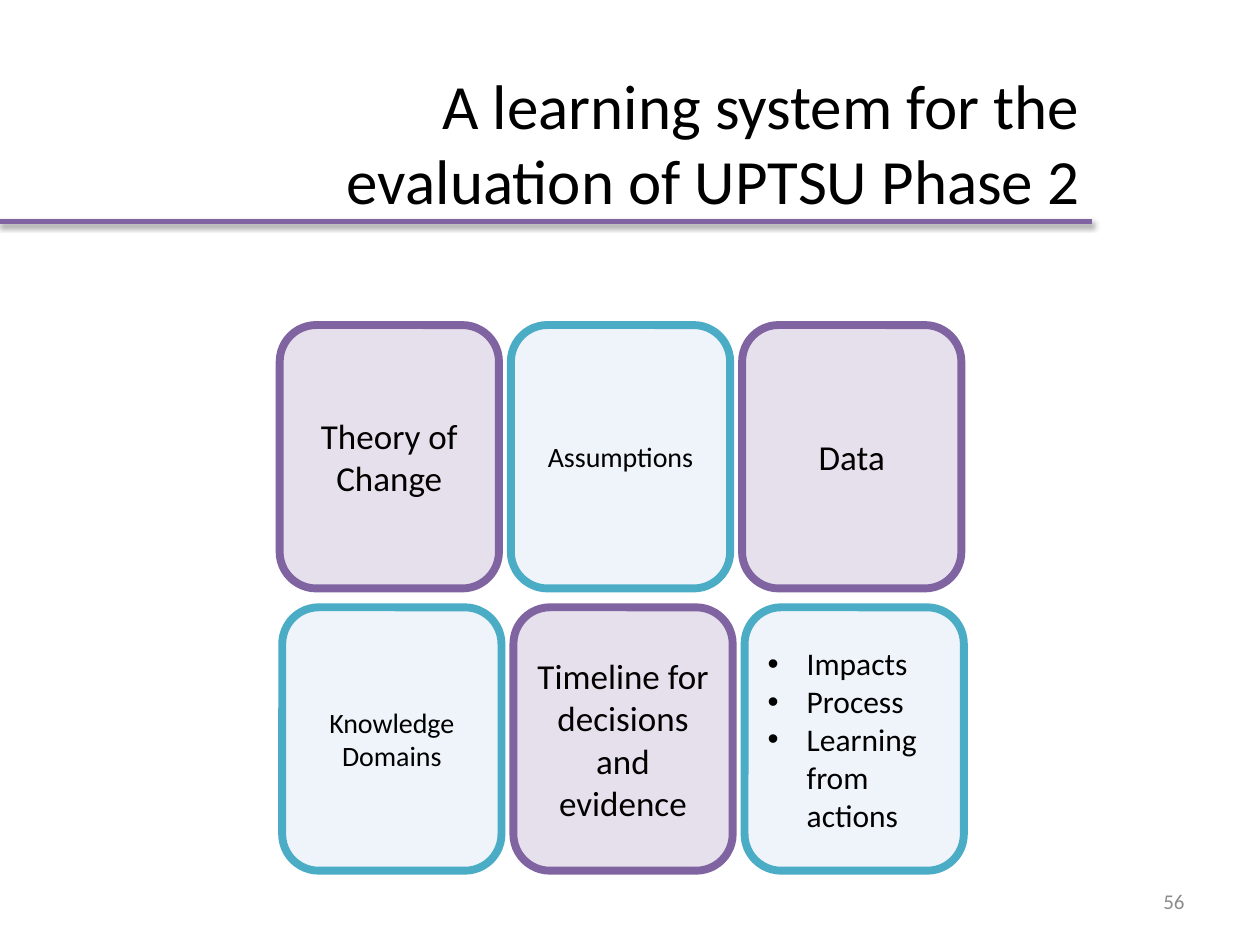
from dataclasses import dataclass

from lxml.etree import SubElement
from pptx import Presentation
from pptx.dml.color import RGBColor
from pptx.enum.shapes import MSO_CONNECTOR as Connector, MSO_SHAPE as Shape
from pptx.enum.text import MSO_ANCHOR as Anchor, PP_ALIGN as Align
from pptx.oxml.ns import qn
from pptx.util import Inches, Pt


@dataclass(frozen=True)
class Theme:
    font: str = "Calibri"
    ink: str = "000000"
    muted: str = "8C8C8C"
    purple: str = "8064A2"
    lilac: str = "E6E0EC"
    teal: str = "4BACC6"
    sky: str = "DEEBF7"
    title_size: int = 36
    major_size: int = 20
    list_size: int = 18
    minor_size: int = 16
    number_size: int = 12
    card_line: float = 4.5
    rule_line: float = 3


def add_child(parent, tag, **attributes):
    return SubElement(parent, qn(tag), {key: str(value) for key, value in attributes.items()})


def write_text(box, lines, *, font, size, color, align=Align.CENTER, bullets=False):
    """Fill a shape with one paragraph per line."""
    frame = box.text_frame
    frame.word_wrap = True
    frame.vertical_anchor = Anchor.MIDDLE
    for index, line in enumerate(lines):
        para = frame.add_paragraph() if index else frame.paragraphs[0]
        para.alignment = align
        span = para.add_run()
        span.text = line
        span.font.name = font
        span.font.size = Pt(size)
        span.font.color.rgb = RGBColor.from_string(color)
        if bullets:
            properties = para._p.get_or_add_pPr()
            indent = Inches(0.31)
            properties.set("marL", str(indent))
            properties.set("indent", str(-indent))
            add_child(properties, "a:buFont", typeface="Arial")
            add_child(properties, "a:buChar", char="•")


class SlideBuilder:
    def __init__(self, slide, theme):
        self.slide = slide
        self.theme = theme

    def title(self, text, left, top, width, height):
        box = self.slide.shapes.title
        box.left, box.top, box.width, box.height = map(Inches, (left, top, width, height))
        write_text(box, [text], font=self.theme.font, size=self.theme.title_size,
                   color=self.theme.ink, align=Align.RIGHT)

    def card(self, lines, left, top, width, height, *, size, fill, line,
             opacity=None, bullets=False):
        box = self.slide.shapes.add_shape(
            Shape.ROUNDED_RECTANGLE, *map(Inches, (left, top, width, height)))
        box.shadow.inherit = False
        box.fill.solid()
        box.fill.fore_color.rgb = RGBColor.from_string(fill)
        if opacity is not None:
            color = box._element.spPr.find(qn("a:solidFill")).find(qn("a:srgbClr"))
            add_child(color, "a:alpha", val=opacity * 1000)
        box.line.color.rgb = RGBColor.from_string(line)
        box.line.width = Pt(self.theme.card_line)
        write_text(box, lines, font=self.theme.font, size=size, color=self.theme.ink,
                   align=Align.LEFT if bullets else Align.CENTER, bullets=bullets)

    def rule(self, left, right, top):
        rule = self.slide.shapes.add_connector(
            Connector.STRAIGHT, *map(Inches, (left, top, right, top)))
        rule.line.color.rgb = RGBColor.from_string(self.theme.purple)
        rule.line.width = Pt(self.theme.rule_line)
        # Soft shadow below the rule
        effects = add_child(rule._element.spPr, "a:effectLst")
        shadow = add_child(effects, "a:outerShdw", blurRad=Pt(3.1), dist=Pt(1.8),
                           dir=90 * 60000, rotWithShape=0)
        color = add_child(shadow, "a:srgbClr", val=self.theme.ink)
        add_child(color, "a:alpha", val=35000)

    def page_number(self, text, left, top, width, height):
        box = self.slide.shapes.add_textbox(*map(Inches, (left, top, width, height)))
        write_text(box, [text], font=self.theme.font, size=self.theme.number_size,
                   color=self.theme.muted, align=Align.RIGHT)


def main():
    theme = Theme()
    deck = Presentation()
    deck.slide_width, deck.slide_height = Inches(10), Inches(7.5)
    title_only = deck.slide_layouts[5]
    page = SlideBuilder(deck.slides.add_slide(title_only), theme)

    # Heading
    page.title("A learning system for the evaluation of UPTSU Phase 2", 1.22, 0.57, 7.45, 1.11)

    # Cards: two rows of three, the two styles alternating
    styles = [
        dict(size=theme.major_size, fill=theme.lilac, line=theme.purple),
        dict(size=theme.minor_size, fill=theme.sky, line=theme.teal, opacity=50),
    ]
    rows = [
        (2.22, 2.58, [["Theory of Change"], ["Assumptions"], ["Data"]]),
        (2.24, 4.82, [["Knowledge Domains"], ["Timeline for decisions and evidence"],
                      ["Impacts", "Process", "Learning from actions"]]),
    ]
    column_step = 1.835
    for row, (left, top, cards) in enumerate(rows):
        for column, lines in enumerate(cards):
            style = dict(styles[(row + column) % 2])
            if len(lines) > 1:
                style.update(size=theme.list_size, bullets=True)
            page.card(lines, left + column * column_step, top, 1.74, 2.09, **style)

    # Heading rule and page number
    page.rule(0, 8.67, 1.76)
    page.page_number("56", 7.17, 6.95, 2.33, 0.4)

    deck.save("out.pptx")


if __name__ == "__main__":
    main()
